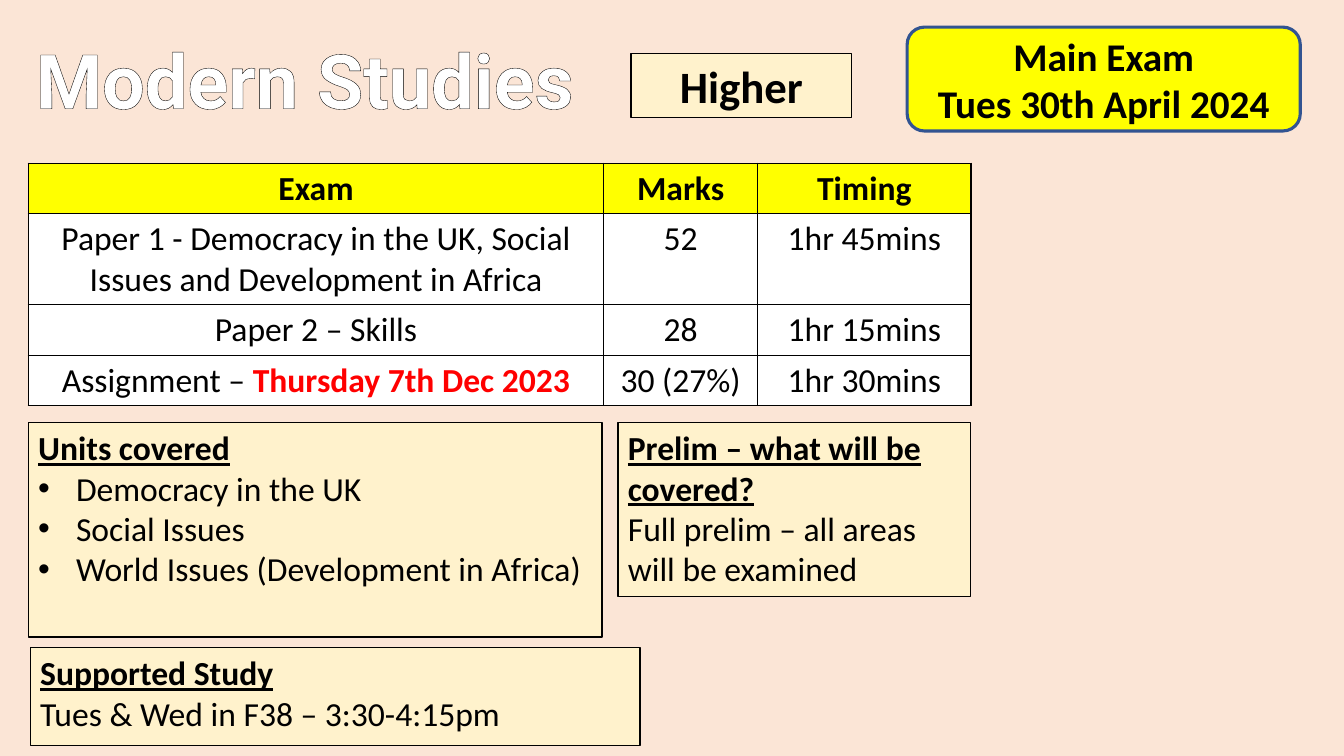
"""Build the Higher Modern Studies exam information slide."""
from lxml import etree
from pptx import Presentation
from pptx.dml.color import RGBColor
from pptx.enum.shapes import MSO_SHAPE
from pptx.enum.text import MSO_ANCHOR, PP_ALIGN
from pptx.oxml.ns import qn
from pptx.util import Pt

RECTANGLE, ROUNDED = MSO_SHAPE.RECTANGLE, MSO_SHAPE.ROUNDED_RECTANGLE
TOP, MIDDLE = MSO_ANCHOR.TOP, MSO_ANCHOR.MIDDLE
LEFT, CENTER = PP_ALIGN.LEFT, PP_ALIGN.CENTER

PEACH = RGBColor(0xFB, 0xE5, 0xD6)
CREAM = RGBColor(0xFF, 0xF2, 0xCC)
YELLOW = RGBColor(0xFF, 0xFF, 0x00)
WHITE = RGBColor(0xFF, 0xFF, 0xFF)
BLACK = RGBColor(0x00, 0x00, 0x00)
RED = RGBColor(0xFF, 0x00, 0x00)
BLUE = RGBColor(0x32, 0x54, 0x91)

TITLE = "Modern Studies"
LEVEL = "Higher"
EXAM_DATE = ["Main Exam", "Tues 30th April 2024"]
ASSIGNMENT, DEADLINE = "Assignment –", " Thursday 7th Dec 2023"
EXAM_ROWS = [
    ("Exam", "Marks", "Timing"),
    ("Paper 1 - Democracy in the UK, Social Issues and Development in Africa",
     "52", "1hr 45mins"),
    ("Paper 2 – Skills", "28", "1hr 15mins"),
    (ASSIGNMENT, "30 (27%)", "1hr 30mins"),
]
COLUMN_WIDTHS = [411, 110, 152.4]
ROW_HEIGHTS = [36, 65, 36, 36]
TABLE_LEFT, TABLE_TOP = 20.2, 116.6
NOTES = [
    ("Units covered",
     ["Democracy in the UK", "Social Issues", "World Issues (Development in Africa)"],
     True, (20.2, 301.7, 409.7, 153.2)),
    ("Supported Study", ["Tues & Wed in F38 – 3:30-4:15pm"],
     False, (21.6, 462.4, 435.6, 70.2)),
    ("Prelim – what will be covered?", ["Full prelim – all areas will be examined"],
     False, (441.4, 301.7, 252, 124.6)),
]
BODY_SIZE = 24
BULLET_INDENT = 27


def style(span, size, color=BLACK, bold=False, underline=False, name="Calibri"):
    """Set the font of one run."""
    font = span.font
    font.name, font.size, font.bold, font.underline = name, Pt(size), bold, underline
    font.color.rgb = color


def add_bullet(para):
    """Give a paragraph a hanging round bullet."""
    properties = para._p.get_or_add_pPr()
    properties.set("marL", str(Pt(BULLET_INDENT)))
    properties.set("indent", str(-Pt(BULLET_INDENT)))
    etree.SubElement(properties, qn("a:buFont"), typeface="Arial")
    etree.SubElement(properties, qn("a:buChar"), char="•")


def add_line(parent, tag, color, width):
    """Append a solid line element to a cell or run."""
    line = etree.SubElement(parent, qn(tag), w=str(Pt(width)))
    fill = etree.SubElement(line, qn("a:solidFill"))
    etree.SubElement(fill, qn("a:srgbClr"), val=str(color))
    return line


def add_box(page, kind, place, lines, fill, line, width, align, anchor):
    """Draw a filled box and return its paragraphs."""
    box = page.shapes.add_shape(kind, *map(Pt, place))
    box.shadow.inherit = False
    box.fill.solid()
    box.fill.fore_color.rgb = fill
    box.line.color.rgb = line
    box.line.width = Pt(width)
    frame = box.text_frame
    frame.word_wrap = True
    frame.vertical_anchor = anchor
    frame.text = "\n".join(lines)
    for para in frame.paragraphs:
        para.alignment = align
    return frame.paragraphs


def add_heading(page):
    """Add the outlined title, the level and the exam date."""
    frame = page.shapes.add_textbox(Pt(0), Pt(20.2), Pt(435.6), Pt(74.9)).text_frame
    frame.word_wrap = True
    frame.text = TITLE
    para = frame.paragraphs[0]
    para.alignment = CENTER
    span = para.runs[0]
    style(span, 54, WHITE, bold=True, name="Roboto")
    properties = span._r.get_or_add_rPr()
    properties.insert(0, add_line(properties, "a:ln", BLACK, 2.25))

    level = add_box(page, RECTANGLE, (450.7, 38.2, 157.7, 46.1), [LEVEL],
                    CREAM, BLACK, 0.75, CENTER, TOP)
    style(level[0].runs[0], 32, bold=True)
    for para in add_box(page, ROUNDED, (648, 19.4, 280.8, 74.2), EXAM_DATE,
                        YELLOW, BLUE, 2.25, CENTER, MIDDLE):
        style(para.runs[0], 28, bold=True)


def add_exam_table(page):
    """Add the table of papers, marks and timings."""
    table = page.shapes.add_table(
        len(EXAM_ROWS), len(COLUMN_WIDTHS), Pt(TABLE_LEFT), Pt(TABLE_TOP),
        Pt(sum(COLUMN_WIDTHS)), Pt(sum(ROW_HEIGHTS))).table
    for column, width in zip(table.columns, COLUMN_WIDTHS):
        column.width = Pt(width)
    for index, (row, height, texts) in enumerate(zip(table.rows, ROW_HEIGHTS, EXAM_ROWS)):
        row.height = Pt(height)
        for cell, text in zip(row.cells, texts):
            for side in "LRTB":
                add_line(cell._tc.get_or_add_tcPr(), f"a:ln{side}", BLACK, 1)
            cell.fill.solid()
            cell.fill.fore_color.rgb = WHITE if index else YELLOW
            cell.text_frame.text = text
            para = cell.text_frame.paragraphs[0]
            para.alignment = CENTER
            style(para.runs[0], BODY_SIZE, bold=index == 0)
            if text == ASSIGNMENT:
                deadline = para.add_run()
                deadline.text = DEADLINE
                style(deadline, BODY_SIZE, RED, bold=True)


def add_notes(page):
    """Add the boxes with an underlined heading and body lines."""
    for heading, lines, bulleted, place in NOTES:
        paras = add_box(page, RECTANGLE, place, [heading, *lines],
                        CREAM, BLACK, 1, LEFT, TOP)
        style(paras[0].runs[0], BODY_SIZE, bold=True, underline=True)
        for para in paras[1:]:
            style(para.runs[0], BODY_SIZE)
            if bulleted:
                add_bullet(para)


def main():
    """Build and save the deck."""
    deck = Presentation()
    deck.slide_width, deck.slide_height = Pt(960), Pt(540)
    page = deck.slides.add_slide(deck.slide_layouts[6])
    page.background.fill.solid()
    page.background.fill.fore_color.rgb = PEACH
    add_heading(page)
    add_exam_table(page)
    add_notes(page)
    deck.save("out.pptx")


if __name__ == "__main__":
    main()
